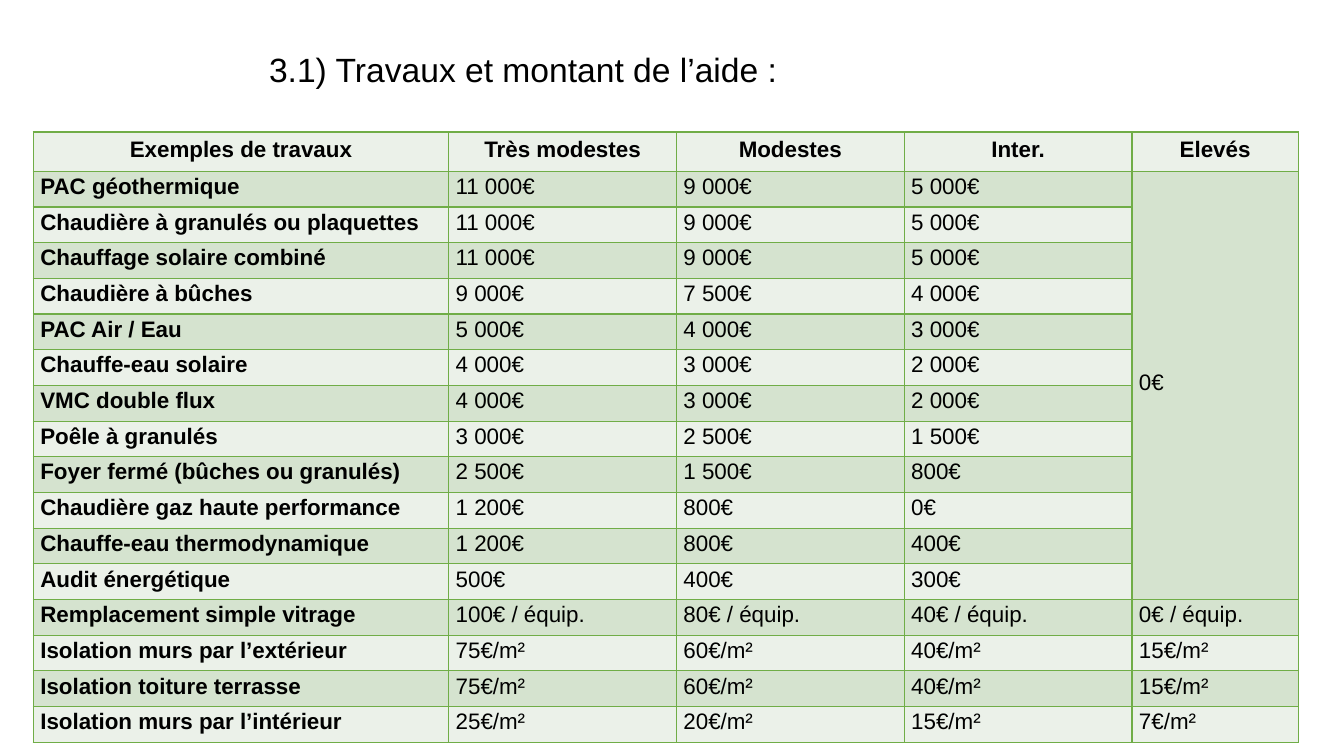
from dataclasses import dataclass

from lxml.etree import SubElement
from pptx import Presentation
from pptx.dml.color import RGBColor as Rgb
from pptx.enum.text import MSO_ANCHOR as Anchor, MSO_AUTO_SIZE as AutoSize, PP_ALIGN as Align
from pptx.oxml.ns import qn
from pptx.slide import Slide
from pptx.table import Table, _Cell as Cell
from pptx.text.text import _Paragraph as Paragraph
from pptx.util import Inches, Pt

WIDTH, HEIGHT = Inches(13.33), Inches(7.5)
FONT = "Arial"
COLORS = {"text": "000000", "border": "70AD47", "light": "EBF1E9", "dark": "D5E3CF"}

# Lengths below are percentages of the slide's width or height
COLUMN_SHARES = (30.9, 16.95, 16.95, 16.95, 12.38)
HEADER_SHARE, ROW_SHARE = 5.2, 4.72
TABLE_LEFT, TABLE_TOP = 2.48, 17.47


@dataclass(frozen=True)
class Work:
    name: str
    amounts: tuple[str, ...]


HEADINGS = ("Exemples de travaux", "Très modestes", "Modestes", "Inter.", "Elevés")
WORKS = (
    Work("PAC géothermique", ("11 000€", "9 000€", "5 000€", "0€")),
    Work("Chaudière à granulés ou plaquettes", ("11 000€", "9 000€", "5 000€")),
    Work("Chauffage solaire combiné", ("11 000€", "9 000€", "5 000€")),
    Work("Chaudière à bûches", ("9 000€", "7 500€", "4 000€")),
    Work("PAC Air / Eau", ("5 000€", "4 000€", "3 000€")),
    Work("Chauffe-eau solaire", ("4 000€", "3 000€", "2 000€")),
    Work("VMC double flux", ("4 000€", "3 000€", "2 000€")),
    Work("Poêle à granulés", ("3 000€", "2 500€", "1 500€")),
    Work("Foyer fermé (bûches ou granulés)", ("2 500€", "1 500€", "800€")),
    Work("Chaudière gaz haute performance", ("1 200€", "800€", "0€")),
    Work("Chauffe-eau thermodynamique", ("1 200€", "800€", "400€")),
    Work("Audit énergétique", ("500€", "400€", "300€")),
    Work("Remplacement simple vitrage", ("100€ / équip.", "80€ / équip.", "40€ / équip.", "0€ / équip.")),
    Work("Isolation murs par l’extérieur", ("75€/m²", "60€/m²", "40€/m²", "15€/m²")),
    Work("Isolation toiture terrasse", ("75€/m²", "60€/m²", "40€/m²", "15€/m²")),
    Work("Isolation murs par l’intérieur", ("25€/m²", "20€/m²", "15€/m²", "7€/m²")),
)
MERGED_ROWS = 12


def across(share: float) -> int:
    return round(WIDTH * share / 100)


def down(share: float) -> int:
    return round(HEIGHT * share / 100)


def format_runs(para: Paragraph, size: int, bold: bool = False) -> None:
    for span in para.runs:
        span.font.name = FONT
        span.font.size = Pt(size)
        span.font.bold = bold
        span.font.color.rgb = Rgb.from_string(COLORS["text"])


def add_title(page: Slide) -> None:
    box = page.shapes.add_textbox(across(19.28), down(5.87), across(40.74), down(6.67))
    frame = box.text_frame
    frame.word_wrap = True
    frame.auto_size = AutoSize.SHAPE_TO_FIT_TEXT
    frame.text = "3.1) Travaux et montant de l’aide :"
    format_runs(frame.paragraphs[0], 24)


def style_cell(cell: Cell, color: str) -> None:
    # Borders come before the fill in the cell's properties
    properties = cell._tc.get_or_add_tcPr()
    for side in ("a:lnL", "a:lnR", "a:lnT", "a:lnB"):
        line = SubElement(properties, qn(side), w=str(Pt(1)))
        fill = SubElement(line, qn("a:solidFill"))
        SubElement(fill, qn("a:srgbClr"), val=COLORS["border"])
    cell.fill.solid()
    cell.fill.fore_color.rgb = Rgb.from_string(COLORS[color])
    cell.vertical_anchor = Anchor.MIDDLE
    cell.margin_left = cell.margin_right = Inches(0.07)
    cell.margin_top = cell.margin_bottom = 0


def write_cell(cell: Cell, text: str, bold: bool, align: Align) -> None:
    cell.text_frame.text = text
    para = cell.text_frame.paragraphs[0]
    para.alignment = align
    para.line_spacing = Pt(14.4)
    para.space_after = Pt(8)
    format_runs(para, 16, bold)


def size_grid(table: Table) -> None:
    for column, share in zip(table.columns, COLUMN_SHARES):
        column.width = across(share)
    for index, row in enumerate(table.rows):
        row.height = down(ROW_SHARE if index else HEADER_SHARE)


def add_aid_table(page: Slide) -> None:
    lines = [HEADINGS, *((work.name, *work.amounts) for work in WORKS)]
    table = page.shapes.add_table(
        len(lines), len(HEADINGS), across(TABLE_LEFT), down(TABLE_TOP),
        across(sum(COLUMN_SHARES)), down(HEADER_SHARE + ROW_SHARE * len(WORKS)),
    ).table
    table.first_row = table.horz_banding = False
    size_grid(table)

    # One shared amount for the highest incomes
    last = len(HEADINGS) - 1
    table.cell(1, last).merge(table.cell(MERGED_ROWS, last))

    for row, texts in enumerate(lines):
        for column in range(len(HEADINGS)):
            cell = table.cell(row, column)
            shared = cell.is_merge_origin or cell.is_spanned
            style_cell(cell, "dark" if shared or row % 2 else "light")
            if column < len(texts):
                align = Align.LEFT if row else Align.CENTER
                write_cell(cell, texts[column], row == 0 or column == 0, align)


def main() -> None:
    deck = Presentation()
    deck.slide_width, deck.slide_height = WIDTH, HEIGHT
    page = deck.slides.add_slide(deck.slide_layouts[6])
    add_title(page)
    add_aid_table(page)
    deck.save("out.pptx")


if __name__ == "__main__":
    main()
